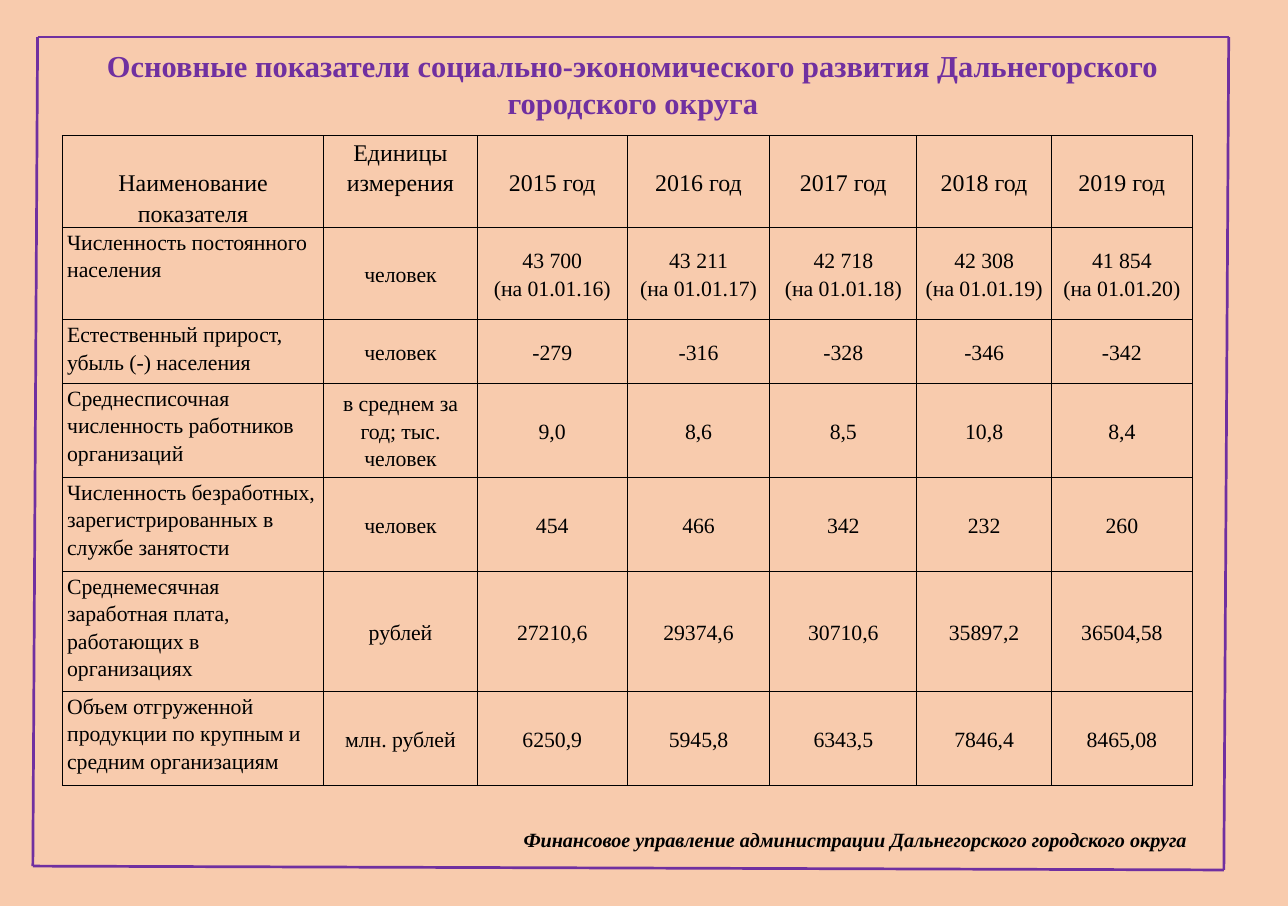
from pptx import Presentation
from pptx.dml.color import RGBColor
from pptx.enum.shapes import MSO_CONNECTOR
from pptx.enum.text import MSO_ANCHOR, MSO_AUTO_SIZE, PP_ALIGN
from pptx.oxml import parse_xml
from pptx.oxml.ns import nsdecls
from pptx.util import Inches, Pt

PEACH = RGBColor(0xF8, 0xCB, 0xAD)
PURPLE = RGBColor(0x70, 0x30, 0xA0)
BLACK = RGBColor(0, 0, 0)
FONT = "Times New Roman"

# Column widths and row heights, in percent of the slide
COLS = [20.29, 11.91, 11.66, 11.06, 11.42, 10.45, 10.94]
ROWS = [10.1, 10.2, 7, 10.38, 10.38, 13.2, 10.38]

YEARS = range(2015, 2020)
PEOPLE = ["43 700", "43 211", "42 718", "42 308", "41 854"]
DATA = [
    ["Наименование показателя", "Единицы измерения"] + [f"{year} год" for year in YEARS],
    ["Численность постоянного населения", "человек"]
    + [f"{count}\n(на 01.01.{year - 1999})" for count, year in zip(PEOPLE, YEARS)],
    ["Естественный прирост, убыль (-) населения", "человек",
     "-279", "-316", "-328", "-346", "-342"],
    ["Среднесписочная численность работников организаций",
     "в среднем за год; тыс. человек", "9,0", "8,6", "8,5", "10,8", "8,4"],
    ["Численность безработных, зарегистрированных в службе занятости", "человек",
     "454", "466", "342", "232", "260"],
    ["Среднемесячная заработная плата, работающих в организациях", "рублей",
     "27210,6", "29374,6", "30710,6", "35897,2", "36504,58"],
    ["Объем отгруженной продукции по крупным и средним организациям", "млн. рублей",
     "6250,9", "5945,8", "6343,5", "7846,4", "8465,08"],
]


def write(frame, text, size=10, color=BLACK, bold=False, italic=False,
          align=PP_ALIGN.CENTER, spacing=1.0):
    frame.word_wrap = True
    frame.text = text
    for para in frame.paragraphs:
        para.alignment = align
        para.line_spacing = spacing
        for run in para.runs:
            font = run.font
            font.name, font.size = FONT, Pt(size)
            font.bold, font.italic = bold, italic
            font.color.rgb = color


class Page:
    def __init__(self, deck):
        self.wide, self.high = deck.slide_width, deck.slide_height
        self.slide = deck.slides.add_slide(deck.slide_layouts[5])
        self.shapes = self.slide.shapes
        fill = self.slide.background.fill
        fill.solid()
        fill.fore_color.rgb = PEACH

    def x(self, share):
        return round(self.wide * share / 100)

    def y(self, share):
        return round(self.high * share / 100)

    def box(self, left, top, width, height):
        return self.x(left), self.y(top), self.x(width), self.y(height)

    def title(self, text, *place):
        shape = self.shapes.title
        shape.left, shape.top, shape.width, shape.height = self.box(*place)
        frame = shape.text_frame
        frame.auto_size = MSO_AUTO_SIZE.NONE
        frame.vertical_anchor = MSO_ANCHOR.TOP
        write(frame, text, size=14, color=PURPLE, bold=True)

    def label(self, text, *place, **style):
        write(self.shapes.add_textbox(*self.box(*place)).text_frame, text, **style)

    def line(self, start, end):
        line = self.shapes.add_connector(
            MSO_CONNECTOR.STRAIGHT, self.x(start[0]), self.y(start[1]),
            self.x(end[0]), self.y(end[1]))
        line.line.color.rgb = PURPLE
        line.line.width = Pt(1.25)
        line._element.spPr.append(parse_xml(f"<a:effectLst {nsdecls('a')}/>"))

    def border(self, cell):
        props = cell._tc.get_or_add_tcPr()
        for side in "LRTB":
            props.append(parse_xml(
                f'<a:ln{side} {nsdecls("a")} w="{Pt(0.5)}"><a:solidFill>'
                f'<a:srgbClr val="{BLACK}"/></a:solidFill></a:ln{side}>'))

    def table(self, data, left, top):
        place = self.box(left, top, sum(COLS), sum(ROWS))
        table = self.shapes.add_table(len(ROWS), len(COLS), *place).table
        table.first_row = table.horz_banding = False
        for col, share in zip(table.columns, COLS):
            col.width = self.x(share)
        for row, share in zip(table.rows, ROWS):
            row.height = self.y(share)
        for i, texts in enumerate(data):
            for j, text in enumerate(texts):
                cell = table.cell(i, j)
                cell.margin_left = cell.margin_right = Inches(0.03)
                cell.margin_top = cell.margin_bottom = 0
                cell.vertical_anchor = MSO_ANCHOR.MIDDLE
                if i and j == 0 or (i, j) == (0, 1):
                    cell.vertical_anchor = MSO_ANCHOR.TOP
                elif i == j == 0:
                    cell.vertical_anchor = MSO_ANCHOR.BOTTOM
                self.border(cell)
                cell.fill.background()
                write(cell.text_frame, text, size=10 if i else 11, spacing=1.15,
                      align=PP_ALIGN.LEFT if i and j == 0 else PP_ALIGN.CENTER)


def main():
    deck = Presentation()
    deck.slide_width, deck.slide_height = Inches(8.23), Inches(5.79)
    page = Page(deck)

    # Footer
    page.label("Финансовое управление администрации Дальнегорского городского округа",
               39.45, 90.5, 57.6, 4.49, size=9.3, bold=True, italic=True,
               align=PP_ALIGN.LEFT)

    # Slightly skewed frame
    ends = [(2.92, 4.1), (95.4, 4.1), (95.02, 96.03), (2.55, 95.6)]
    for start, end in zip(ends, ends[1:] + ends[:1]):
        page.line(start, end)

    # Heading and indicators
    page.title("Основные показатели социально-экономического развития "
               "Дальнегорского городского округа", 2.79, 4.35, 92.71, 9.84)
    page.table(DATA, 4.85, 15)
    deck.save("out.pptx")


if __name__ == "__main__":
    main()
